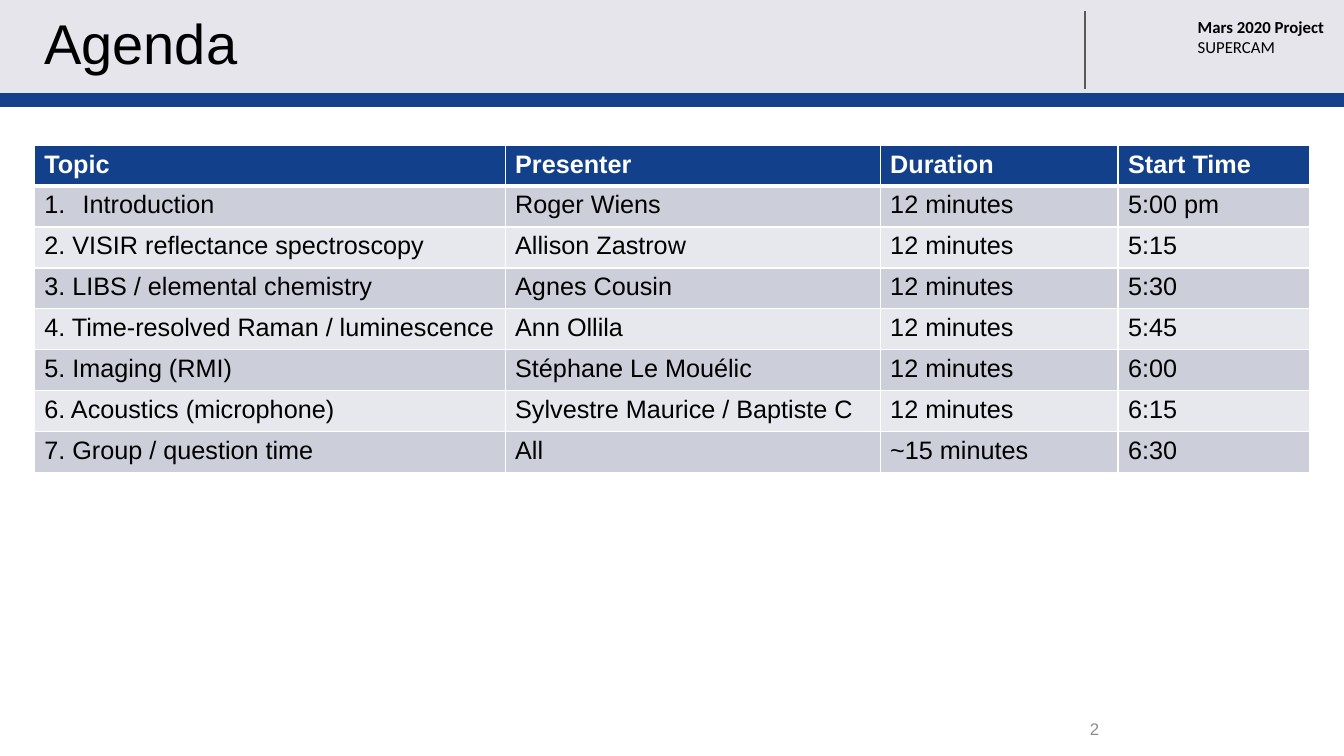
"""Build the agenda slide: a titled header band above the schedule of talks."""
from lxml import etree
from pptx import Presentation
from pptx.dml.color import RGBColor
from pptx.enum.shapes import MSO_CONNECTOR, MSO_SHAPE
from pptx.enum.text import MSO_ANCHOR, PP_ALIGN
from pptx.oxml.ns import qn
from pptx.util import Inches, Pt

STRAIGHT = MSO_CONNECTOR.STRAIGHT
RECTANGLE = MSO_SHAPE.RECTANGLE
MIDDLE = MSO_ANCHOR.MIDDLE
LEFT, RIGHT = PP_ALIGN.LEFT, PP_ALIGN.RIGHT

BLACK = RGBColor(0x00, 0x00, 0x00)
WHITE = RGBColor(0xFF, 0xFF, 0xFF)
BAND_GREY = RGBColor(0xE6, 0xE5, 0xEC)
STRIPE_BLUE = RGBColor(0x13, 0x41, 0x8B)
HEADING_BLUE = RGBColor(0x13, 0x40, 0x8B)
DIVIDER_GREY = RGBColor(0x59, 0x59, 0x59)
NUMBER_GREY = RGBColor(0x8C, 0x8C, 0x8C)
ROW_FILLS = [RGBColor(0xE7, 0xE8, 0xEE), RGBColor(0xCC, 0xCF, 0xDA)]

SLIDE_WIDTH, SLIDE_HEIGHT = 13.33, 7.5
BAND_HEIGHT = 0.93
STRIPE_TOP, STRIPE_HEIGHT = 0.92, 0.14
DIVIDER_LEFT = 10.76
TABLE_LEFT, TABLE_TOP, TABLE_HEIGHT = 0.34, 1.44, 3.25
COLUMN_WIDTHS = [4.67, 3.72, 2.36, 1.9]
NUMBER_INDENT = Inches(0.38)
NO_GRID_STYLE = "{2D5ABB26-0587-4C30-8999-92F81FD0307C}"

AGENDA = [
    ("Topic", "Presenter", "Duration", "Start Time"),
    ("Introduction", "Roger Wiens", "12 minutes", "5:00 pm"),
    ("2. VISIR reflectance spectroscopy", "Allison Zastrow", "12 minutes", "5:15"),
    ("3. LIBS / elemental chemistry", "Agnes Cousin", "12 minutes", "5:30"),
    ("4. Time-resolved Raman / luminescence", "Ann Ollila", "12 minutes", "5:45"),
    ("5. Imaging (RMI)", "Stéphane Le Mouélic", "12 minutes", "6:00"),
    ("6. Acoustics (microphone)", "Sylvestre Maurice / Baptiste C", "12 minutes", "6:15"),
    ("7. Group / question time", "All", "~15 minutes", "6:30"),
]


def write(paragraph, text, color, **font_format):
    """Put one formatted run into a paragraph."""
    run = paragraph.add_run()
    run.text = text
    run.font.color.rgb = color
    for attribute, value in font_format.items():
        setattr(run.font, attribute, value)


def add_border(cell, side, points):
    """Draw one white edge of a table cell."""
    edge = etree.SubElement(cell._tc.get_or_add_tcPr(), qn(f"a:ln{side}"), w=str(Pt(points)))
    fill = etree.SubElement(edge, qn("a:solidFill"))
    etree.SubElement(fill, qn("a:srgbClr"), val=str(WHITE))


deck = Presentation()
deck.slide_width, deck.slide_height = Inches(SLIDE_WIDTH), Inches(SLIDE_HEIGHT)
slide = deck.slides.add_slide(deck.slide_layouts[6])

band = slide.shapes.add_shape(RECTANGLE, 0, 0, Inches(SLIDE_WIDTH), Inches(BAND_HEIGHT))
band.shadow.inherit = False
band.fill.solid()
band.fill.fore_color.rgb = BAND_GREY
band.line.fill.background()

stripe = slide.shapes.add_table(
    1, 2, 0, Inches(STRIPE_TOP), Inches(SLIDE_WIDTH), Inches(STRIPE_HEIGHT)
).table
stripe._tbl.tblPr.find(qn("a:tableStyleId")).text = NO_GRID_STYLE
for half in stripe.iter_cells():
    half.margin_top = half.margin_bottom = 0
    half.fill.solid()
    half.fill.fore_color.rgb = STRIPE_BLUE
    etree.SubElement(half.text_frame.paragraphs[0]._p, qn("a:endParaRPr"), sz="300")

divider = slide.shapes.add_connector(
    STRAIGHT, Inches(DIVIDER_LEFT), Inches(0.11), Inches(DIVIDER_LEFT), Inches(0.88)
)
divider.line.color.rgb = DIVIDER_GREY
divider.line.width = Pt(1)
etree.SubElement(divider._element.spPr, qn("a:effectLst"))

project_lines = [("Mars 2020 Project", True), ("SUPERCAM", False)]
for left, top, width, height, lines, font_name, size, color, frame_format, alignment in [
    (11.78, 0.12, 1.55, 0.5, project_lines, "Calibri", 12, BLACK, {}, LEFT),
    (0.34, 0.11, 10.28, 0.61, [("Agenda", False)], "Arial", 40, BLACK,
     {"vertical_anchor": MIDDLE, "margin_right": Inches(0.08)}, LEFT),
    (7.89, 7.03, 3.11, 0.4, [("2", False)], "Arial", 12, NUMBER_GREY,
     {"vertical_anchor": MIDDLE}, RIGHT),
]:
    frame = slide.shapes.add_textbox(
        Inches(left), Inches(top), Inches(width), Inches(height)
    ).text_frame
    frame.word_wrap = True
    for attribute, value in frame_format.items():
        setattr(frame, attribute, value)
    for index, (text, bold) in enumerate(lines):
        paragraph = frame.add_paragraph() if index else frame.paragraphs[0]
        paragraph.alignment = alignment
        write(paragraph, text, color, name=font_name, size=Pt(size), bold=bold)

schedule = slide.shapes.add_table(
    len(AGENDA), len(COLUMN_WIDTHS), Inches(TABLE_LEFT), Inches(TABLE_TOP),
    Inches(sum(COLUMN_WIDTHS)), Inches(TABLE_HEIGHT),
).table
for column, width in zip(schedule.columns, COLUMN_WIDTHS):
    column.width = Inches(width)

for row_index, entries in enumerate(AGENDA):
    is_heading = row_index == 0
    edges = {"L": 1, "R": 1, "T": 3 if row_index == 1 else 1, "B": 3 if is_heading else 1}
    for column_index, entry in enumerate(entries):
        cell = schedule.cell(row_index, column_index)
        for side, points in edges.items():
            add_border(cell, side, points)
        cell.fill.solid()
        cell.fill.fore_color.rgb = HEADING_BLUE if is_heading else ROW_FILLS[row_index % 2]
        write(cell.text_frame.paragraphs[0], entry, WHITE if is_heading else BLACK,
              name="Arial", size=Pt(18), bold=is_heading)

introduction = schedule.cell(1, 0).text_frame.paragraphs[0]._p.get_or_add_pPr()
introduction.set("marL", str(NUMBER_INDENT))
introduction.set("indent", str(-NUMBER_INDENT))
etree.SubElement(introduction, qn("a:buFont"), typeface="+mj-lt")
etree.SubElement(introduction, qn("a:buAutoNum"), type="arabicPeriod")

deck.save("out.pptx")
